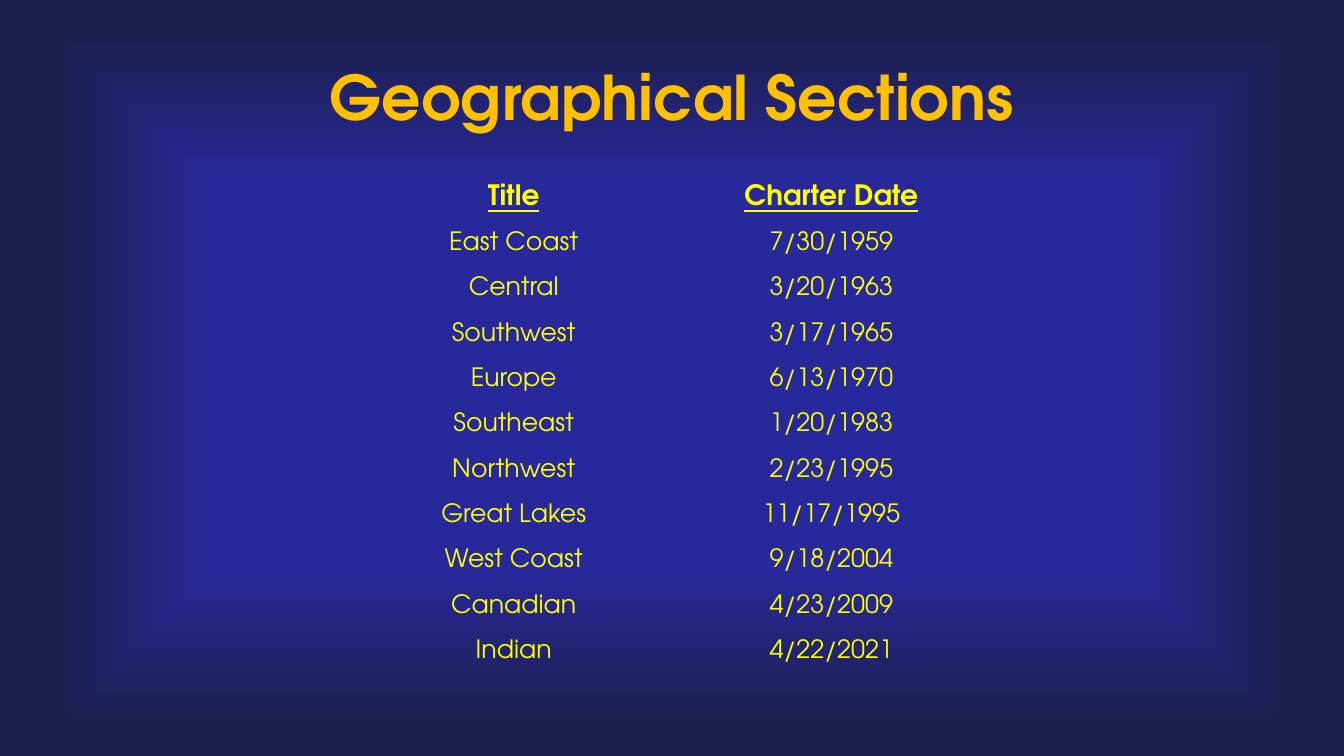
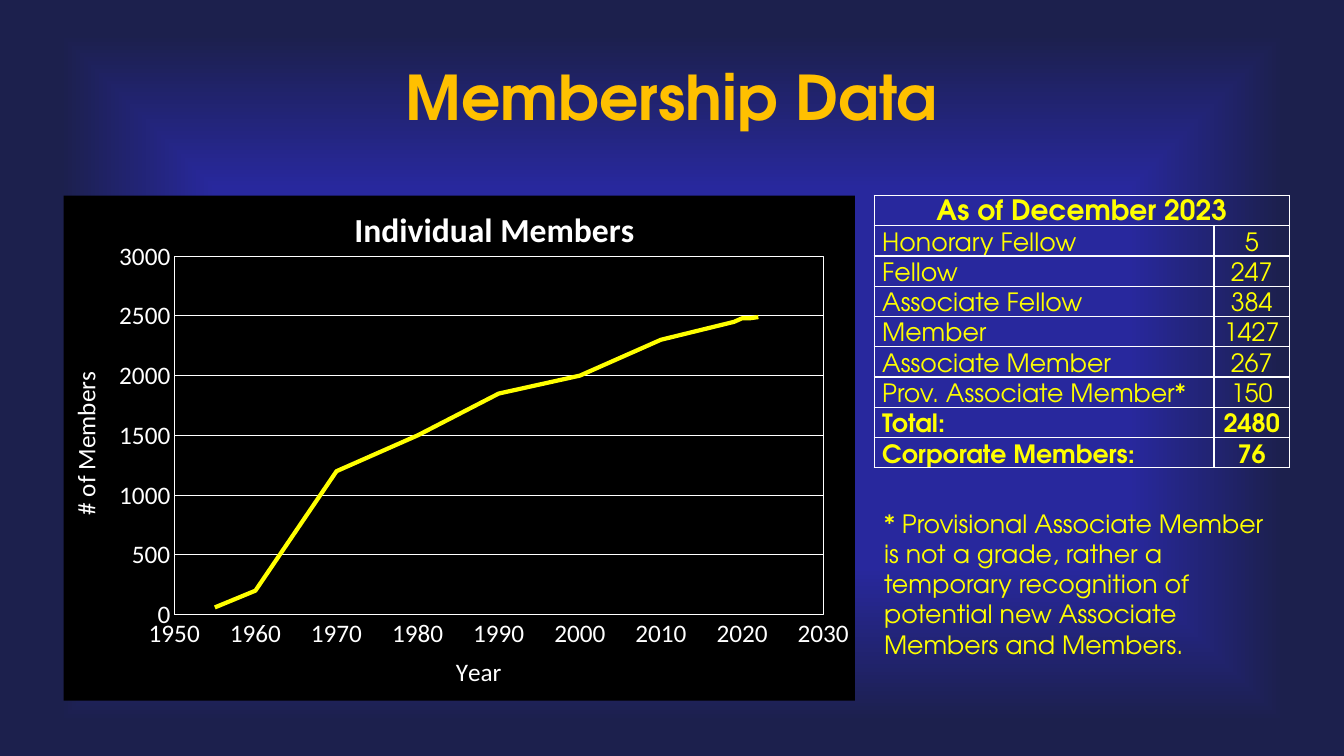
from lxml import etree
from pptx import Presentation
from pptx.chart.data import XyChartData
from pptx.dml.color import RGBColor
from pptx.enum.chart import XL_CHART_TYPE, XL_TICK_MARK
from pptx.enum.text import MSO_ANCHOR, MSO_AUTO_SIZE, PP_ALIGN
from pptx.oxml import parse_xml
from pptx.oxml.ns import nsdecls, qn
from pptx.util import Inches, Pt

SCATTER_LINES = XL_CHART_TYPE.XY_SCATTER_LINES_NO_MARKERS
NO_TICKS = XL_TICK_MARK.NONE
MIDDLE, BOTTOM = MSO_ANCHOR.MIDDLE, MSO_ANCHOR.BOTTOM
GROW = MSO_AUTO_SIZE.SHAPE_TO_FIT_TEXT
LEFT, CENTER = PP_ALIGN.LEFT, PP_ALIGN.CENTER

BLUE = RGBColor(0x28, 0x28, 0x9D)
NAVY = RGBColor(0x1C, 0x20, 0x4D)
GOLD = RGBColor(0xFF, 0xC0, 0x00)
YELLOW = RGBColor(0xFF, 0xFF, 0x00)
WHITE = RGBColor(0xFF, 0xFF, 0xFF)
BLACK = RGBColor(0x00, 0x00, 0x00)
FONT = "TeX Gyre Adventor"
CHART_FONT = "Calibri"
NO_TABLE_STYLE = "{2D5ABB26-0587-4C30-8999-92F81FD0307C}"


def write(paragraph, text, size, color=YELLOW, bold=False, font=FONT):
    run = paragraph.add_run()
    run.text = text
    run.font.name = font
    run.font.size = Pt(size)
    run.font.bold = bold
    run.font.color.rgb = color
    return run


def place(element, **fractions):
    layout = element.find(qn("c:layout"))
    if layout is None:
        layout = parse_xml(f"<c:layout {nsdecls('c')}/>")
        element.insert(0 if element.find(qn("c:tx")) is None else 1, layout)
    manual = etree.SubElement(layout, qn("c:manualLayout"))
    if "w" in fractions:
        etree.SubElement(manual, qn("c:layoutTarget"), val="inner")
    for side in "xy":
        etree.SubElement(manual, qn(f"c:{side}Mode"), val="edge")
    for side, value in fractions.items():
        etree.SubElement(manual, qn(f"c:{side}"), val=str(value))


prs = Presentation()
prs.slide_width = Inches(13.33)
prs.slide_height = Inches(7.5)

master = prs.slide_master
backdrop = master.background.fill
backdrop.gradient()
for stop, position, color in zip(backdrop.gradient_stops, (0.5, 0.91), (BLUE, NAVY)):
    stop.position = position
    stop.color.rgb = color
gradient = master.element.find(".//" + qn("a:gradFill"))
for direction in gradient.findall(qn("a:lin")):
    gradient.remove(direction)
gradient.find(qn("a:gsLst")).addnext(parse_xml(
    f'<a:path {nsdecls("a")} path="shape">'
    '<a:fillToRect l="50000" t="50000" r="50000" b="50000"/></a:path>'))

title_only = prs.slide_layouts[5]
heading = title_only.placeholders[0]
heading.left, heading.top = Inches(0), Inches(0.12)
heading.width, heading.height = Inches(13.33), Inches(1.67)

slides = []
for topic in ("Geographical Sections", "Membership Data"):
    slide = prs.slides.add_slide(title_only)
    frame = slide.shapes.title.text_frame
    frame.vertical_anchor = MIDDLE
    frame.paragraphs[0].alignment = CENTER
    run = write(frame.paragraphs[0], topic, 44, GOLD, True)
    run.font._element.insert(0, parse_xml(
        f'<a:ln {nsdecls("a")} w="9525"><a:solidFill>'
        f'<a:srgbClr val="{BLACK}"/></a:solidFill></a:ln>'))
    slides.append(slide)
sections_slide, membership_slide = slides

sections = [
    ("Title", "Charter Date"),
    ("East Coast", "7/30/1959"),
    ("Central", "3/20/1963"),
    ("Southwest", "3/17/1965"),
    ("Europe", "6/13/1970"),
    ("Southeast", "1/20/1983"),
    ("Northwest", "2/23/1995"),
    ("Great Lakes", "11/17/1995"),
    ("West Coast", "9/18/2004"),
    ("Canadian", "4/23/2009"),
    ("Indian", "4/22/2021"),
]
grades = [
    ("As of December 2023", ""),
    ("Honorary Fellow", "5"),
    ("Fellow", "247"),
    ("Associate Fellow", "384"),
    ("Member", "1427"),
    ("Associate Member", "267"),
    ("Prov. Associate Member*", "150"),
    ("Total:", "2480"),
    ("Corporate Members:", "76"),
]
bold_labels = ("Total:", "Corporate Members:")

for slide, rows, left, top, widths, row_height, ruled in (
    (sections_slide, sections, 3.52, 1.74, (3.15, 3.15), 0.45, False),
    (membership_slide, grades, 8.67, 1.94, (3.37, 0.75), 0.3, True),
):
    table = slide.shapes.add_table(
        len(rows), 2, Inches(left), Inches(top),
        Inches(sum(widths)), Inches(row_height * len(rows))).table
    table.first_row = table.horz_banding = False
    table._tbl.tblPr.find(qn("a:tableStyleId")).text = NO_TABLE_STYLE
    for column, width in zip(table.columns, widths):
        column.width = Inches(width)
    if ruled:
        table.cell(0, 0).merge(table.cell(0, 1))
    for r, entries in enumerate(rows):
        table.rows[r].height = Inches(row_height)
        for c, entry in enumerate(entries):
            cell = table.cell(r, c)
            cell.fill.background()
            label = ruled and r > 0 and c == 0
            cell.vertical_anchor = BOTTOM if ruled else MIDDLE
            cell.margin_left = Inches(0.08 if label else 0)
            cell.margin_right = cell.margin_top = cell.margin_bottom = 0
            paragraph = cell.text_frame.paragraphs[0]
            paragraph.alignment = LEFT if label else CENTER
            if entry:
                bold = r == 0 or entries[0] in bold_labels
                run = write(paragraph, entry, 18 if r else 20, bold=bold)
                run.font.underline = r == 0 and not ruled
            if ruled:
                for i, side in enumerate("LRTB"):
                    cell._tc.get_or_add_tcPr().insert(i, parse_xml(
                        f'<a:ln{side} {nsdecls("a")} w="12700"><a:solidFill>'
                        f'<a:srgbClr val="{WHITE}"/></a:solidFill></a:ln{side}>'))

members_by_year = {
    1955: 60, 1960: 200, 1970: 1200, 1980: 1500, 1990: 1850, 2000: 2000,
    2010: 2300, 2019: 2450, 2020: 2480, 2021: 2480, 2022: 2490,
}
growth = XyChartData()
individual = growth.add_series("Individual Members")
for year, members in members_by_year.items():
    individual.add_data_point(year, members)
chart = membership_slide.shapes.add_chart(
    SCATTER_LINES, Inches(0.63), Inches(1.94), Inches(7.85), Inches(5.01), growth).chart
chart.has_legend = False
chart.font.name = CHART_FONT
chart.font.size = Pt(18)
chart.font.color.rgb = WHITE

chart.has_title = True
write(chart.chart_title.text_frame.paragraphs[0], "Individual Members", 24, WHITE, True, CHART_FONT)
place(chart.chart_title._element, x=0.36, y=0.01)

for axis, name, low, high, step, x, y in (
    (chart.category_axis, "Year", 1950, 2030, 10, 0.49, 0.9),
    (chart.value_axis, "# of Members", 0, 3000, 500, 0, 0.34),
):
    axis.minimum_scale, axis.maximum_scale, axis.major_unit = low, high, step
    axis.major_tick_mark = axis.minor_tick_mark = NO_TICKS
    axis.has_major_gridlines = False
    axis.tick_labels.font.name = CHART_FONT
    axis.tick_labels.font.size = Pt(18)
    axis.tick_labels.font.color.rgb = WHITE
    axis.tick_labels.number_format = "General"
    axis.tick_labels.number_format_is_linked = False
    axis.format.line.color.rgb = WHITE
    axis.format.line.width = Pt(0.75)
    write(axis.axis_title.text_frame.paragraphs[0], name, 18, WHITE, font=CHART_FONT)
    place(axis.axis_title._element, x=x, y=y)

members_axis = chart.value_axis
members_axis.axis_title.text_frame._txBody.bodyPr.set("rot", "-5400000")
members_axis.has_major_gridlines = True
members_axis.major_gridlines.format.line.color.rgb = WHITE
members_axis.major_gridlines.format.line.width = Pt(0.75)

plot = chart.plots[0]
plot.vary_by_categories = False
curve = plot.series[0].format.line
curve.color.rgb = YELLOW
curve.width = Pt(3)

plot_area = chart._chartSpace.find(".//" + qn("c:plotArea"))
place(plot_area, x=0.14, y=0.12, w=0.82, h=0.71)
plot_area.append(parse_xml(
    f'<c:spPr {nsdecls("c", "a")}><a:noFill/><a:ln w="9525"><a:solidFill>'
    f'<a:srgbClr val="{WHITE}"/></a:solidFill></a:ln></c:spPr>'))
chart._chartSpace.find(qn("c:chart")).addnext(parse_xml(
    f'<c:spPr {nsdecls("c", "a")}><a:solidFill><a:srgbClr val="{BLACK}"/></a:solidFill>'
    '<a:ln><a:noFill/></a:ln></c:spPr>'))

footnote = membership_slide.shapes.add_textbox(
    Inches(8.67), Inches(4.99), Inches(4.12), Inches(1.62)).text_frame
footnote.word_wrap = True
footnote.auto_size = GROW
write(footnote.paragraphs[0],
      "* Provisional Associate Member is not a grade, rather a temporary recognition "
      "of potential new Associate Members and Members.", 18)

prs.save("out.pptx")
